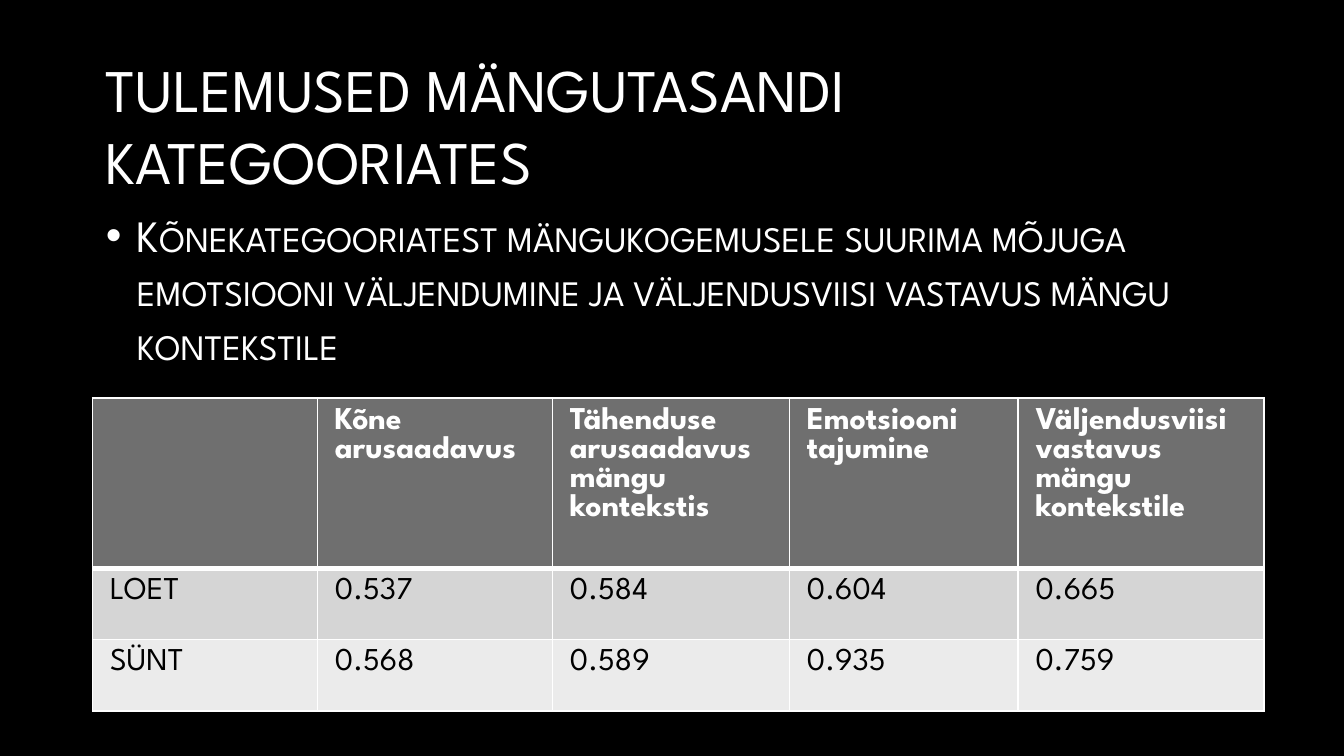
import lxml.etree
import pptx
import pptx.dml.color
import pptx.enum.text
import pptx.oxml.ns
import pptx.util

Cm = pptx.util.Cm
Pt = pptx.util.Pt
qn = pptx.oxml.ns.qn

FONT = "League Spartan"
WHITE = "FFFFFF"
BLACK = "000000"
HEADER_FILL = "6F6F6F"
BODY_FILLS = ("D5D5D5", "EBEBEB")
COLUMN_WIDTHS = (4.25, 4.44, 4.48, 4.32, 4.65)
ROW_HEIGHT = 1.35
ROWS = (
    ("", "Kõne arusaadavus", "Tähenduse arusaadavus mängu kontekstis",
     "Emotsiooni tajumine", "Väljendusviisi vastavus mängu kontekstile"),
    ("LOET", "0.537", "0.584", "0.604", "0.665"),
    ("SÜNT", "0.568", "0.589", "0.935", "0.759"),
)


def rgb(color):
    return pptx.dml.color.RGBColor.from_string(color)


def write_text(paragraph, text, size, color=WHITE, bold=False, small_caps=False):
    run = paragraph.add_run()
    run.text = text
    run.font.name = FONT
    run.font.size = Pt(size)
    run.font.bold = bold
    run.font.color.rgb = rgb(color)
    if small_caps:
        run.font._element.set("cap", "small")


def add_text_box(slide, top, height):
    """Add a middle-anchored box and return its first paragraph."""
    frame = slide.shapes.add_textbox(Cm(1.75), Cm(top), Cm(21.9), Cm(height)).text_frame
    frame.word_wrap = True
    frame.vertical_anchor = pptx.enum.text.MSO_ANCHOR.MIDDLE
    return frame.paragraphs[0]


def add_bullet(paragraph, indent):
    properties = paragraph._p.get_or_add_pPr()
    properties.set("marL", str(Cm(indent)))
    properties.set("indent", str(-Cm(indent)))
    color = lxml.etree.SubElement(properties, qn("a:buClr"))
    lxml.etree.SubElement(color, qn("a:srgbClr"), val=WHITE)
    lxml.etree.SubElement(properties, qn("a:buFont"), typeface="Arial")
    lxml.etree.SubElement(properties, qn("a:buChar"), char="•")


def set_borders(cell, **widths):
    """Draw white borders; sides are given in the order left, right, top, bottom."""
    properties = cell._tc.get_or_add_tcPr()
    for index, (side, width) in enumerate(widths.items()):
        line = lxml.etree.Element(qn(f"a:ln{side}"), w=str(Pt(width)))
        fill = lxml.etree.SubElement(line, qn("a:solidFill"))
        lxml.etree.SubElement(fill, qn("a:srgbClr"), val=WHITE)
        properties.insert(index, line)


def fill_cell(cell, text, fill, color, bold, top_width, bottom_width):
    cell.fill.solid()
    cell.fill.fore_color.rgb = rgb(fill)
    cell.margin_left = cell.margin_right = Cm(0.33)
    cell.margin_top = cell.margin_bottom = Cm(0.17)
    set_borders(cell, L=1, R=1, T=top_width, B=bottom_width)
    if text:
        write_text(cell.text_frame.paragraphs[0], text, 17, color=color, bold=bold)


def add_results_table(slide):
    """Add the table; its header row grows to fit the longest heading."""
    table = slide.shapes.add_table(
        len(ROWS), len(COLUMN_WIDTHS), Cm(1.75), Cm(7.52),
        Cm(sum(COLUMN_WIDTHS)), Cm(ROW_HEIGHT * len(ROWS))).table
    for column, width in zip(table.columns, COLUMN_WIDTHS):
        column.width = Cm(width)
    for row_index, texts in enumerate(ROWS):
        table.rows[row_index].height = Cm(ROW_HEIGHT)
        header = row_index == 0
        for column_index, text in enumerate(texts):
            fill_cell(
                table.cell(row_index, column_index), text,
                fill=HEADER_FILL if header else BODY_FILLS[row_index - 1],
                color=WHITE if header else BLACK, bold=header,
                top_width=3 if row_index == 1 else 1,
                bottom_width=3 if header else 1)


def main():
    presentation = pptx.Presentation()
    presentation.slide_width = Cm(25.4)
    presentation.slide_height = Cm(14.29)
    slide = presentation.slides.add_slide(presentation.slide_layouts[6])
    slide.background.fill.solid()
    slide.background.fill.fore_color.rgb = rgb(BLACK)

    title = add_text_box(slide, 1.3, 2.1)
    write_text(title, "TULEMUSED MÄNGUTASANDI KATEGOORIATES", 32.4)

    finding = add_text_box(slide, 3.4, 4.12)
    add_bullet(finding, 0.59)
    write_text(
        finding,
        "Kõnekategooriatest mängukogemusele suurima mõjuga emotsiooni "
        "väljendumine ja väljendusviisi vastavus mängu kontekstile",
        24, small_caps=True)

    add_results_table(slide)
    presentation.save("out.pptx")


if __name__ == "__main__":
    main()
